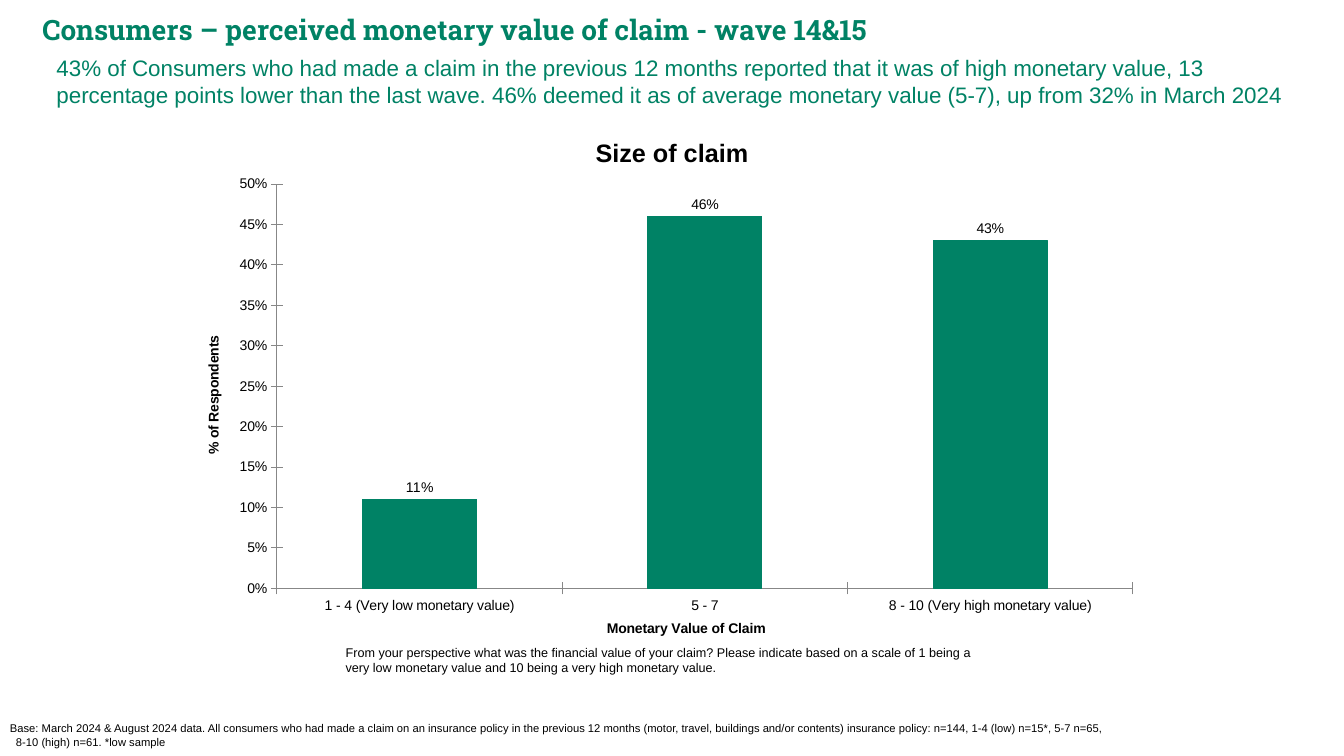
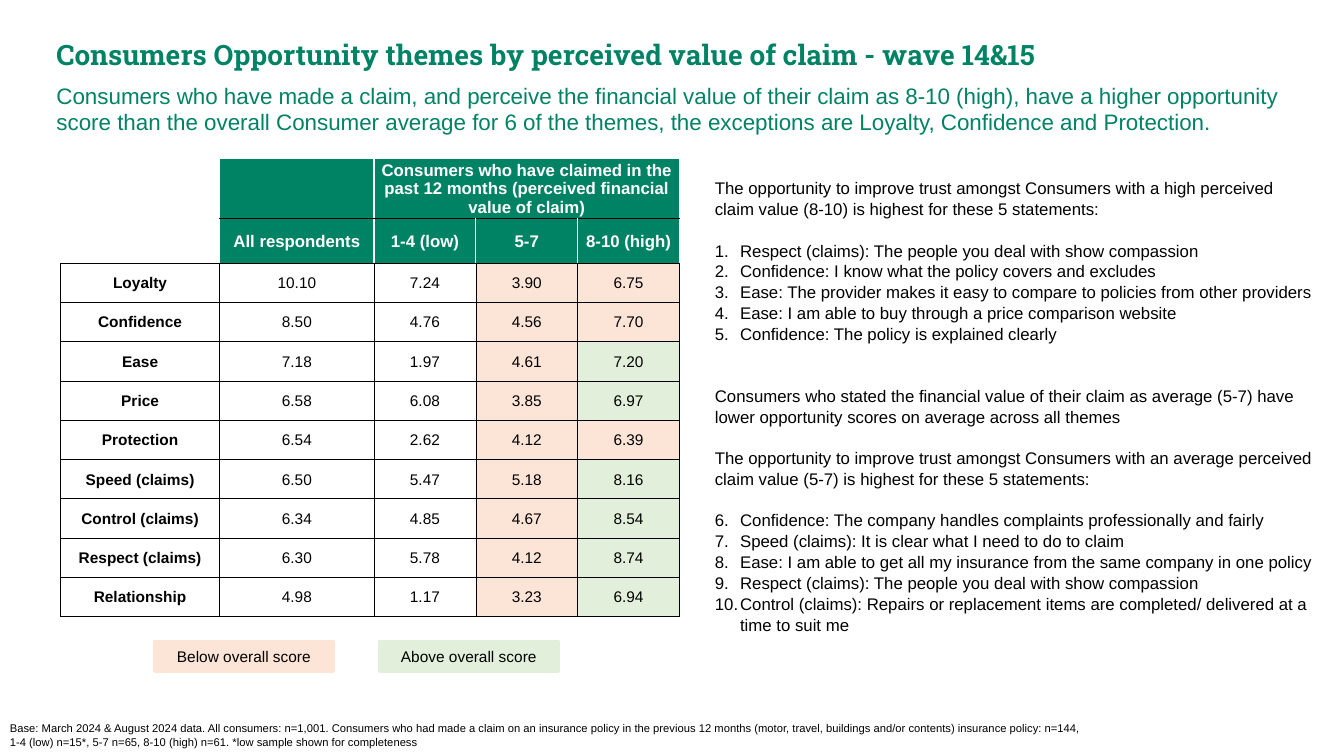
from lxml import etree
from pptx import Presentation
from pptx import util as u
from pptx.chart.data import CategoryChartData
from pptx.dml.color import RGBColor
from pptx.enum import chart as ch, shapes, text
from pptx.oxml.ns import qn

PX = 9144
GREEN, BLACK, WHITE, GREY = "008265", "000000", "FFFFFF", "878787"
PEACH, LIME = "FCE4D6", "E2EFDA"
LEFT, MID = text.PP_ALIGN.LEFT, text.PP_ALIGN.CENTER
TOP, CORE = text.MSO_ANCHOR.TOP, text.MSO_ANCHOR.MIDDLE

LEAD = "The opportunity to improve trust amongst Consumers with "
TAIL = " is highest for these 5 statements:"
NOTES = [
    (LEAD + "a high perceived claim value (8-10)" + TAIL, 0),
    ("Respect (claims): The people you deal with show compassion", 1),
    ("Confidence: I know what the policy covers and excludes", 1),
    ("Ease: The provider makes it easy to compare to policies from other providers", 1),
    ("Ease: I am able to buy through a price comparison website", 1),
    ("Confidence: The policy is explained clearly", 1),
    ("Consumers who stated the financial value of their claim as average (5-7) have "
     "lower opportunity scores on average across all themes", 0),
    (LEAD + "an average perceived claim value (5-7)" + TAIL, 0),
    ("Confidence: The company handles complaints professionally and fairly", 6),
    ("Speed (claims): It is clear what I need to do to claim", 6),
    ("Ease: I am able to get all my insurance from the same company in one policy", 6),
    ("Respect (claims): The people you deal with show compassion", 6),
    ("Control (claims): Repairs or replacement items are completed/ delivered at a "
     "time to suit me", 6),
]
GAPS = {1: 1, 6: 2, 7: 1, 8: 1}
HEADS = [
    ["", "", "Consumers who have claimed in the past 12 months (perceived financial "
     "value of claim)", "", ""],
    ["", "All respondents", "1-4 (low)", "5-7", "8-10 (high)"],
]
SCORES = [
    ("Loyalty", 10.10, 7.24, 3.90, 6.75),
    ("Confidence", 8.50, 4.76, 4.56, 7.70),
    ("Ease", 7.18, 1.97, 4.61, 7.20),
    ("Price", 6.58, 6.08, 3.85, 6.97),
    ("Protection", 6.54, 2.62, 4.12, 6.39),
    ("Speed (claims)", 6.50, 5.47, 5.18, 8.16),
    ("Control (claims)", 6.34, 4.85, 4.67, 8.54),
    ("Respect (claims)", 6.30, 5.78, 4.12, 8.74),
    ("Relationship", 4.98, 1.17, 3.23, 6.94),
]


def hue(code):
    return RGBColor.from_string(code)


def sub(node, tag, **atts):
    return etree.SubElement(node, qn(tag), atts)


class Deck:
    """Holds the shared style and the current slide."""

    def __init__(self):
        self.prs = Presentation()
        self.prs.slide_width, self.prs.slide_height = 1333 * PX, 750 * PX

    def start(self, kind, title, line, left, top, body):
        self.slide = self.prs.slides.add_slide(self.prs.slide_layouts[kind])
        self.hold(0, (left, top, 1228, 44), [title], size=20, color=GREEN,
                  face="Roboto Slab", bold=True)
        self.hold(1, body, [line], size=16, color=GREEN)

    def place(self, item, box):
        item.left, item.top, item.width, item.height = [n * PX for n in box]

    def font(self, font, size, color=BLACK, bold=False, face="Arial"):
        font.size, font.name, font.bold = u.Pt(size), face, bold
        font.color.rgb = hue(color)

    def put(self, frame, lines, size, align=LEFT, anchor=TOP, **look):
        frame.word_wrap, frame.auto_size = True, text.MSO_AUTO_SIZE.NONE
        frame.vertical_anchor = anchor
        frame.text = "\n".join(lines)
        for para in frame.paragraphs:
            para.alignment = align
            para.space_before = u.Pt(0)
            for run in para.runs:
                self.font(run.font, size, **look)

    def mark(self, para, dent=0, first=0):
        prop = para._p.get_or_add_pPr()
        prop.set("marL", str(dent * PX))
        prop.set("indent", str(-dent * PX))
        if first:
            sub(prop, "a:buAutoNum", type="arabicPeriod", startAt=str(first))
        else:
            sub(prop, "a:buNone")

    def hold(self, spot, box, lines, **look):
        item = self.slide.placeholders[spot]
        self.place(item, box)
        self.put(item.text_frame, lines, **look)
        if spot < 2:
            for para in item.text_frame.paragraphs:
                self.mark(para)
        return item.text_frame

    def label(self, box, lines, size, dent=0):
        item = self.slide.shapes.add_textbox(*[n * PX for n in box])
        self.put(item.text_frame, lines, size)
        for para in item.text_frame.paragraphs:
            self.mark(para, dent)

    def base(self, lines, dent=0):
        self.label((0, 711, 1110, 39), lines, 8, dent)

    def notes(self, box, rows, gaps):
        frame = self.hold(2, box, [row[0] for row in rows], size=12)
        frame.margin_left = frame.margin_right = 0
        frame.margin_top = frame.margin_bottom = 0
        for i, (para, row) in enumerate(zip(frame.paragraphs, rows)):
            self.mark(para, 25 if row[1] else 0, row[1])
            para.line_spacing = 1.04
            para.space_before = u.Pt(14.4 * gaps.get(i, 0))

    def key(self, box, words, color):
        item = self.slide.shapes.add_shape(
            shapes.MSO_SHAPE.RECTANGLE, *[n * PX for n in box])
        item.shadow.inherit = False
        item.fill.solid()
        item.fill.fore_color.rgb = item.line.color.rgb = hue(color)
        item.line.width = u.Pt(2)
        self.put(item.text_frame, [words], 11, MID, CORE)

    def edge(self, cell, **sides):
        prop = cell._tc.get_or_add_tcPr()
        for side in "LRTB":
            color, wide = sides.get(side, (None, 0))
            line = sub(prop, "a:ln" + side, w=str(int(wide * 12700)))
            if color:
                sub(sub(line, "a:solidFill"), "a:srgbClr", val=color)
            else:
                sub(line, "a:noFill")

    def cell(self, cell, words, fill, sides, size, **look):
        cell.margin_left = cell.margin_right = cell.margin_top = PX
        cell.margin_bottom = 0
        cell.vertical_anchor = CORE
        cell.text = words
        para = cell.text_frame.paragraphs[0]
        para.alignment = MID
        for run in para.runs:
            self.font(run.font, size, **look)
        self.edge(cell, **sides)
        if fill:
            cell.fill.solid()
            cell.fill.fore_color.rgb = hue(fill)
        else:
            cell.fill.background()

    def table(self, left, top, wides, highs, heads, scores):
        grid = self.slide.shapes.add_table(
            len(highs), len(wides), left * PX, top * PX,
            sum(wides) * PX, sum(highs) * PX).table
        grid.first_row = grid.horz_banding = False
        for col, wide in zip(grid.columns, wides):
            col.width = wide * PX
        for row, high in zip(grid.rows, highs):
            row.height = high * PX
        thin, pale = (BLACK, 0.5), (WHITE, 1)
        for r, row in enumerate(heads):
            for c, words in enumerate(row):
                sides = dict(L=pale, R=pale, T=thin if r else pale, B=thin)
                if c == 0:
                    sides = dict(R=pale, B=thin) if r else {}
                self.cell(grid.cell(r, c), words, GREEN if c else None, sides,
                          12, color=WHITE, bold=True)
        grid.cell(0, 2).merge(grid.cell(0, 4))
        for r, row in enumerate(scores, len(heads)):
            for c, score in enumerate(row):
                fill = WHITE
                if c > 2:
                    fill = PEACH if score < row[1] else LIME
                self.cell(grid.cell(r, c), f"{score:.2f}" if c else score, fill,
                          dict.fromkeys("LRTB", thin), 11, bold=c == 0)

    def name(self, frame, words, size):
        frame.text = words
        self.font(frame.paragraphs[0].runs[0].font, size, bold=True)

    def bars(self, box, title, cats, vals, across, up, plot):
        data = CategoryChartData(number_format="0%")
        data.categories = cats
        data.add_series("Series 1", vals)
        chart = self.slide.shapes.add_chart(
            ch.XL_CHART_TYPE.COLUMN_CLUSTERED, *[n * PX for n in box], data).chart
        self.font(chart.font, 10)
        chart.has_legend = False
        chart.has_title = True
        self.name(chart.chart_title.text_frame, title, 18)
        chart.chart_title.include_in_layout = False
        for axis, words in ((chart.category_axis, across), (chart.value_axis, up)):
            axis.has_major_gridlines = False
            axis.major_tick_mark = ch.XL_TICK_MARK.CROSS
            axis.minor_tick_mark = ch.XL_TICK_MARK.NONE
            axis.format.line.color.rgb = hue(GREY)
            axis.format.line.width = u.Pt(0.75)
            self.name(axis.axis_title.text_frame, words, 10)
        axis.axis_title.text_frame._txBody.bodyPr.set("rot", "-5400000")
        axis.minimum_scale, axis.maximum_scale, axis.major_unit = 0, 0.5, 0.05
        axis.tick_labels.number_format = "0%"
        axis.tick_labels.number_format_is_linked = False
        group = chart.plots[0]
        group.gap_width, group.vary_by_categories = 150, False
        group.has_data_labels = True
        tags = group.data_labels
        tags.show_value, tags.position = True, ch.XL_LABEL_POSITION.OUTSIDE_END
        tags.number_format, tags.number_format_is_linked = "0%", False
        self.font(tags.font, 10)
        form = group.series[0].format
        form.fill.solid()
        form.fill.fore_color.rgb = form.line.color.rgb = hue(GREEN)
        form.line.width = u.Pt(0.75)
        area = chart._chartSpace.chart.plotArea
        for old in area.findall(qn("c:layout")):
            area.remove(old)
        lay = etree.Element(qn("c:layout"))
        area.insert(0, lay)
        man = sub(lay, "c:manualLayout")
        sub(man, "c:layoutTarget", val="inner")
        for tag in ("xMode", "yMode"):
            sub(man, "c:" + tag, val="edge")
        for tag, val in zip("xywh", plot):
            sub(man, "c:" + tag, val=str(val))


def main():
    deck = Deck()
    deck.start(1, "Consumers – perceived monetary value of claim - wave 14&15",
               "43% of Consumers who had made a claim in the previous 12 months reported "
               "that it was of high monetary value, 13 percentage points lower than the "
               "last wave. 46% deemed it as of average monetary value (5-7), up from 32% "
               "in March 2024", 32, 7, (46, 49, 1264, 64))
    deck.bars((200, 115, 933, 521), "Size of claim",
              ["1 - 4 (Very low monetary value)", "5 - 7",
               "8 - 10 (Very high monetary value)"], [0.11, 0.46, 0.43],
              "Monetary Value of Claim", "% of Respondents", (0.08, 0.13, 0.91, 0.77))
    deck.label((333, 635, 660, 40),
               ["From your perspective what was the financial value of your claim? Please "
                "indicate based on a scale of 1 being a very low monetary value and 10 "
                "being a very high monetary value."], 9)
    deck.base(["Base: March 2024 & August 2024 data. All consumers who had made a claim on "
               "an insurance policy in the previous 12 months (motor, travel, buildings "
               "and/or contents) insurance policy: n=144, 1-4 (low) n=15*, 5-7 n=65, 8-10 "
               "(high) n=61. *low sample"], 6)

    deck.start(3, "Consumers Opportunity themes by perceived value of claim - wave 14&15",
               "Consumers who have made a claim, and perceive the financial value of their "
               "claim as 8-10 (high), have a higher opportunity score than the overall "
               "Consumer average for 6 of the themes, the exceptions are Loyalty, "
               "Confidence and Protection.", 46, 32, (46, 76, 1239, 64))
    deck.notes((709, 176, 596, 471), NOTES, GAPS)
    deck.table(60, 157, [158, 153] + [101] * 3, [60, 44] + [39] * 9, HEADS, SCORES)
    deck.key((153, 636, 178, 30), "Below overall score", PEACH)
    deck.key((376, 636, 178, 30), "Above overall score", LIME)
    deck.base(["Base: March 2024 & August 2024 data. All consumers: n=1,001. Consumers who "
               "had made a claim on an insurance policy in the previous 12 months (motor, "
               "travel, buildings and/or contents) insurance policy: n=144,",
               "1-4 (low) n=15*, 5-7 n=65, 8-10 (high) n=61. *low sample shown for "
               "completeness"])
    deck.prs.save("out.pptx")


if __name__ == "__main__":
    main()
